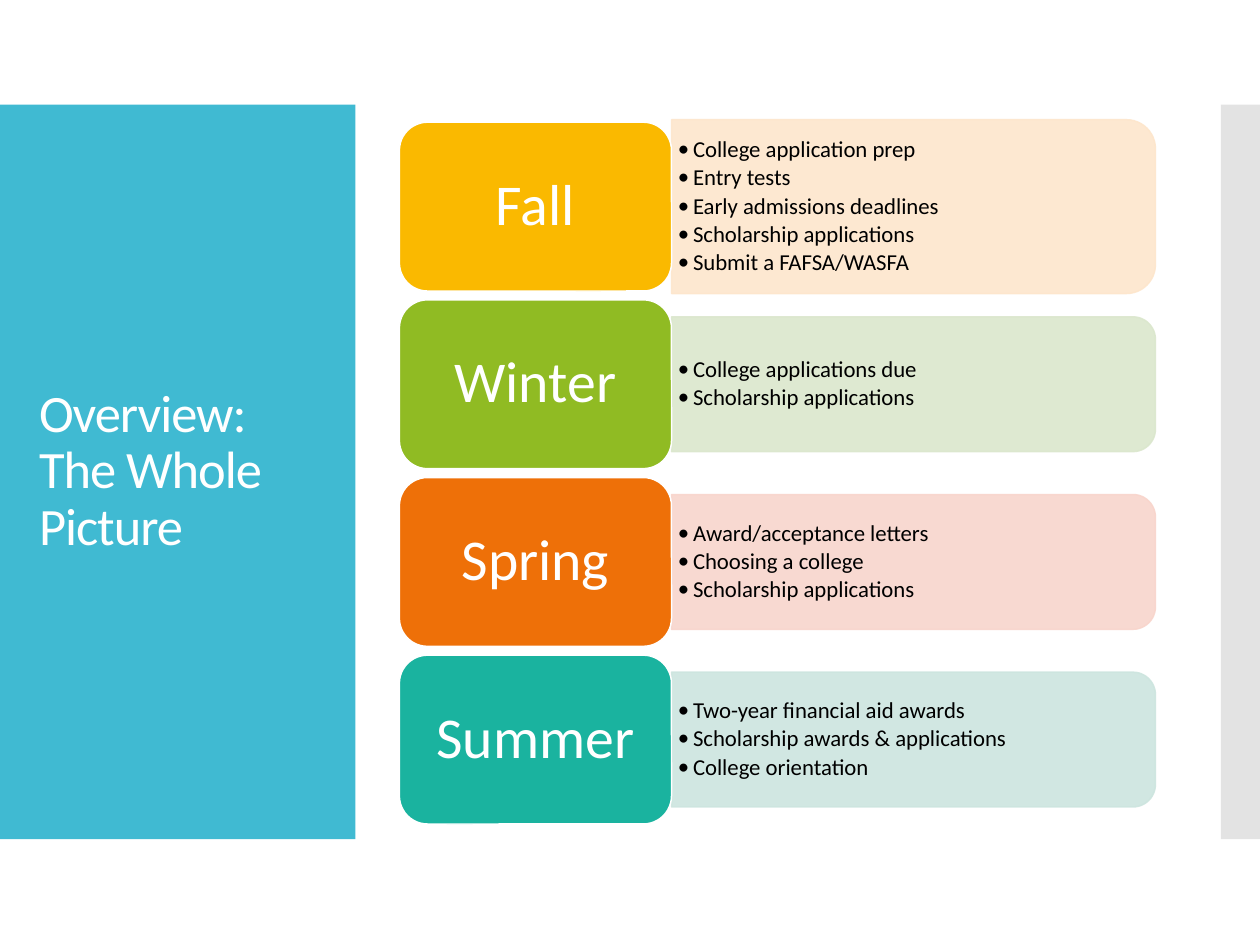
from lxml.etree import SubElement
from pptx import Presentation
from pptx.dml.color import RGBColor as Rgb
from pptx.enum.shapes import MSO_SHAPE as Form
from pptx.enum.text import MSO_ANCHOR as Anchor, MSO_AUTO_SIZE as Auto, PP_ALIGN as Align
from pptx.oxml.ns import qn
from pptx.util import Inches, Pt

HUES = {
    "panel": "40BAD2", "edge": "C8C8C8", "white": "FFFFFF", "black": "000000",
    "fall": "FAB900", "fall_pale": "FDE6CC",
    "winter": "90BB23", "winter_pale": "DBE7CD",
    "spring": "EE7008", "spring_pale": "F8D5CC",
    "summer": "1AB39F", "summer_pale": "CDE5DF",
}

# Each season: name, band height in rows, list
SEASONS = [
    ("Fall", 13.8, ["College application prep", "Entry tests",
                    "Early admissions deadlines", "Scholarship applications",
                    "Submit a FAFSA/WASFA"]),
    ("Winter", 10.7, ["College applications due", "Scholarship applications"]),
    ("Spring", 10.7, ["Award/acceptance letters", "Choosing a college",
                      "Scholarship applications"]),
    ("Summer", 10.7, ["Two-year financial aid awards",
                      "Scholarship awards & applications",
                      "College orientation"]),
]

# Grid of 100 columns by 75 rows
CELL = 0.1
TOP, STEP = 9.7, 14.1
TILE_X, TILE_W, TILE_H = 31.7, 21.6, 13.4
BAND_X, BAND_W = 53.3, 38.4
LIST_W, LIST_PAD = 37.9, 1


def grid(n):
    return Inches(n * CELL)


def tint(color, hue, alpha=100):
    """Set a colour, with its opacity in percent."""
    color.rgb = Rgb.from_string(HUES[hue])
    if alpha < 100:
        node = color._xFill.find(qn("a:srgbClr"))
        SubElement(node, qn("a:alpha")).set("val", str(alpha * 1000))


def write(frame, lines, size=13, hue="black", align=Align.LEFT, inset=(0.1, 0.05),
          after=0, bullet=False, track=0):
    """Fill a text frame, one paragraph a line."""
    frame.word_wrap = True
    frame.auto_size = Auto.NONE
    frame.vertical_anchor = Anchor.MIDDLE
    frame.margin_left = frame.margin_right = Inches(inset[0])
    frame.margin_top = frame.margin_bottom = Inches(inset[1])
    for i, line in enumerate(lines):
        para = frame.add_paragraph() if i else frame.paragraphs[0]
        para.alignment = align
        para.line_spacing = 0.9
        para.space_before, para.space_after = Pt(0), Pt(after)
        run = para.add_run()
        run.text = line
        run.font.name, run.font.size = "Calibri", Pt(size)
        tint(run.font.color, hue)
        if track:
            run._r.get_or_add_rPr().set("spc", str(track))
        if bullet:
            props = para._p.get_or_add_pPr()
            props.set("marL", str(Inches(0.12)))
            props.set("indent", str(-Inches(0.12)))
            SubElement(props, qn("a:buFont")).set("typeface", "Calibri")
            SubElement(props, qn("a:buChar")).set("char", "•")


class Deck:
    """Holds the file, its slide and the look of its parts."""

    def __init__(self):
        self.file = Presentation()
        self.file.slide_width, self.file.slide_height = grid(100), grid(75)
        self.slide = self.file.slides.add_slide(self.file.slide_layouts[5])
        self.shapes = self.slide.shapes

    def block(self, form, x, y, w, h, hue, alpha=100, line=None):
        shape = self.shapes.add_shape(form, *map(grid, (x, y, w, h)))
        shape.shadow.inherit = False
        shape.fill.solid()
        tint(shape.fill.fore_color, hue, alpha)
        if line:
            shape.line.width = Pt(0.85)
            shape.line.fill.solid()
            tint(shape.line.fill.fore_color, line, alpha)
        else:
            shape.line.fill.background()
        return shape

    def title(self, text, x, y, w, h):
        head = self.shapes.title
        head.left, head.top, head.width, head.height = map(grid, (x, y, w, h))
        self.shapes._spTree.append(head._element)  # bring in front of the panel
        write(head.text_frame, [text], size=30, hue="white", track=-60)

    def band(self, x, mid, w, h, hue):
        """Bar with its right corners rounded: a turned upright shape."""
        bar = self.block(Form.ROUND_2_SAME_RECTANGLE, x + (w - h) / 2, mid - w / 2,
                         h, w, hue, alpha=90, line=hue)
        bar.rotation = 90

    def list(self, lines, x, mid, w, h):
        box = self.shapes.add_textbox(*map(grid, (x, mid - h / 2, w, h)))
        write(box.text_frame, lines, inset=(0.05, 0.03), after=2, bullet=True)

    def tile(self, name, x, mid, w, h):
        tile = self.block(Form.ROUNDED_RECTANGLE, x, mid - h / 2, w, h,
                          name.lower(), line="white")
        write(tile.text_frame, [name], size=33, hue="white",
              align=Align.CENTER, inset=(0.14, 0.07))


def main():
    deck = Deck()

    # Side panels and title
    deck.block(Form.RECTANGLE, 0, 8.3, 28.2, 58.3, "panel")
    deck.block(Form.RECTANGLE, 96.9, 8.3, 3.1, 58.3, "edge", alpha=50)
    deck.title("Overview: The Whole Picture", 2.1, 12.3, 24.2, 50.3)

    # One row a season
    for i, (name, tall, lines) in enumerate(SEASONS):
        mid = TOP + i * STEP + TILE_H / 2
        deck.band(BAND_X, mid, BAND_W, tall, name.lower() + "_pale")
        deck.list(lines, BAND_X, mid, LIST_W, tall - LIST_PAD)
        deck.tile(name, TILE_X, mid, TILE_W, TILE_H)

    deck.file.save("out.pptx")


if __name__ == "__main__":
    main()
